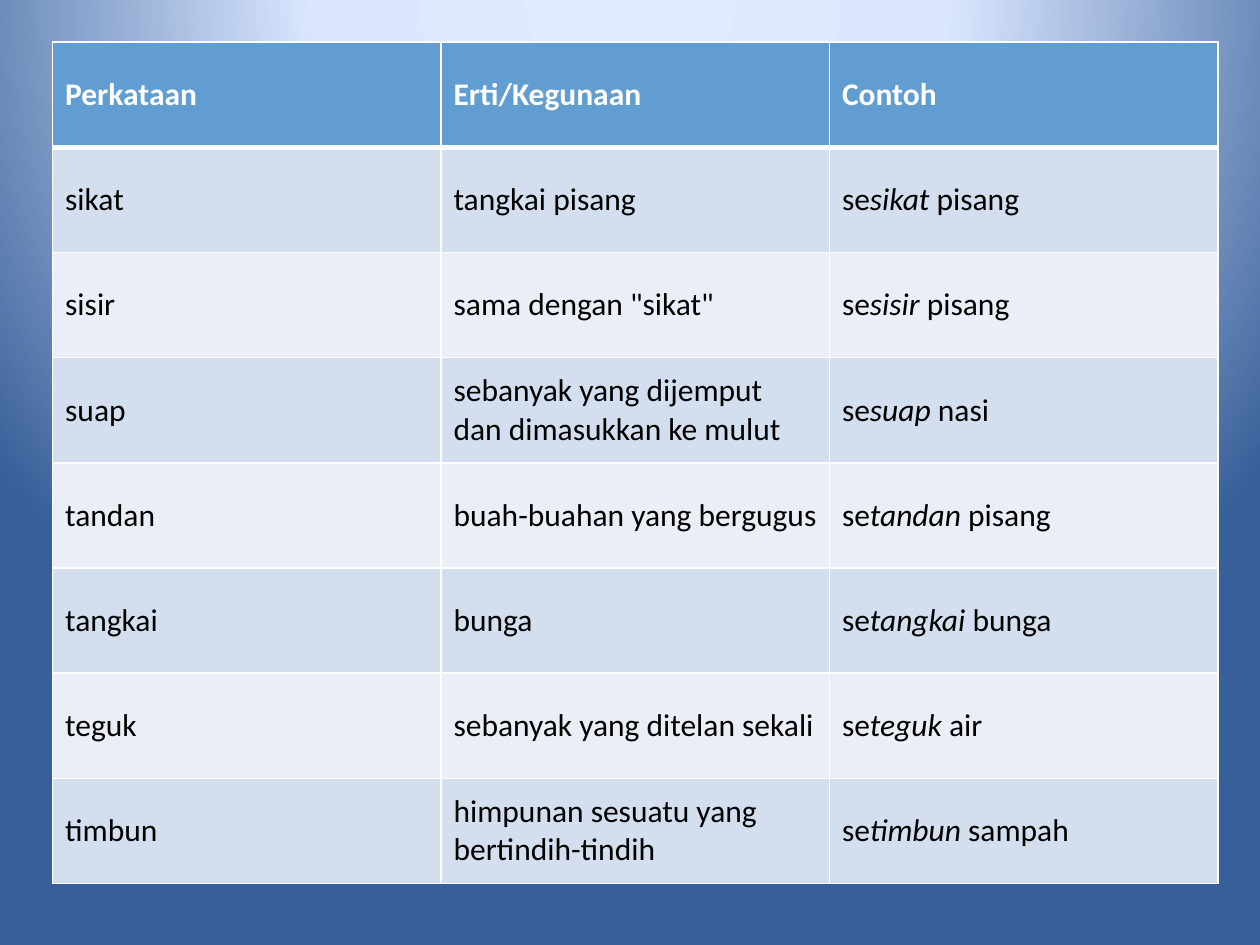
from lxml.etree import SubElement
from pptx import Presentation
from pptx.dml.color import RGBColor
from pptx.enum.text import MSO_ANCHOR
from pptx.oxml import parse_xml
from pptx.oxml.ns import nsdecls, qn
from pptx.util import Cm, Pt

COLORS = {
    "header": "629DD1",
    "odd_row": "D3DFEE",
    "even_row": "EAEFF7",
    "border": "FFFFFF",
    "header_text": "FFFFFF",
    "body_text": "000000",
    "glow": "E0EBFF",
    "glow_edge": "DAE7FF",
    "backdrop": "385F99",
}
HEADERS = ["Perkataan", "Erti/Kegunaan", "Contoh"]
# Word, meaning, and the noun that follows "se" + word in the example
ENTRIES = [
    ("sikat", "tangkai pisang", "pisang"),
    ("sisir", 'sama dengan "sikat"', "pisang"),
    ("suap", "sebanyak yang dijemput dan dimasukkan ke mulut", "nasi"),
    ("tandan", "buah-buahan yang bergugus", "pisang"),
    ("tangkai", "bunga", "bunga"),
    ("teguk", "sebanyak yang ditelan sekali", "air"),
    ("timbun", "himpunan sesuatu yang bertindih-tindih", "sampah"),
]
COLUMN_WIDTH = Cm(7.83)
ROW_HEIGHT = Cm(2.12)


def add_border(cell, side, width):
    line = SubElement(cell._tc.get_or_add_tcPr(), qn(f"a:ln{side}"), w=str(Pt(width)))
    fill = SubElement(line, qn("a:solidFill"))
    SubElement(fill, qn("a:srgbClr"), val=COLORS["border"])


presentation = Presentation()
presentation.slide_width = Cm(25.4)
presentation.slide_height = Cm(19.05)
slide = presentation.slides.add_slide(presentation.slide_layouts[6])

# Radial background centred above the slide
stops = "".join(
    f'<a:gs pos="{position * 1000}"><a:srgbClr val="{COLORS[name]}"/></a:gs>'
    for position, name in [(0, "glow"), (40, "glow_edge"), (100, "backdrop")]
)
background = parse_xml(
    f'<p:bg {nsdecls("p", "a")}><p:bgPr><a:gradFill rotWithShape="1">'
    f"<a:gsLst>{stops}</a:gsLst>"
    '<a:path path="circle"><a:fillToRect l="50000" t="-80000" r="50000" b="180000"/></a:path>'
    "</a:gradFill><a:effectLst/></p:bgPr></p:bg>"
)
slide.element.cSld.insert(0, background)

# Each cell is a list of (text, italic) runs
rows = [[[(header, False)] for header in HEADERS]]
for word, meaning, noun in ENTRIES:
    example = [("se", False), (word, True), (f" {noun}", False)]
    rows.append([[(word, False)], [(meaning, False)], example])

table = slide.shapes.add_table(
    len(rows), len(HEADERS), Cm(1.06), Cm(0.85),
    COLUMN_WIDTH * len(HEADERS), ROW_HEIGHT * len(rows),
).table
for column in table.columns:
    column.width = COLUMN_WIDTH

for row_index, row in enumerate(rows):
    table.rows[row_index].height = ROW_HEIGHT
    is_header = row_index == 0
    fill_name = "header" if is_header else ("even_row", "odd_row")[row_index % 2]
    text_name = "header_text" if is_header else "body_text"
    border_widths = {"L": 1, "R": 1, "T": 3 if row_index == 1 else 1, "B": 3 if is_header else 1}

    for column_index, runs in enumerate(row):
        cell = table.cell(row_index, column_index)
        cell.vertical_anchor = MSO_ANCHOR.MIDDLE
        for side, width in border_widths.items():
            add_border(cell, side, width)
        cell.fill.solid()
        cell.fill.fore_color.rgb = RGBColor.from_string(COLORS[fill_name])

        paragraph = cell.text_frame.paragraphs[0]
        for text, italic in runs:
            run = paragraph.add_run()
            run.text = text
            font_format = {"name": "Calibri", "size": Pt(18), "bold": is_header, "italic": italic}
            for attribute, value in font_format.items():
                setattr(run.font, attribute, value)
            run.font.color.rgb = RGBColor.from_string(COLORS[text_name])

presentation.save("out.pptx")
